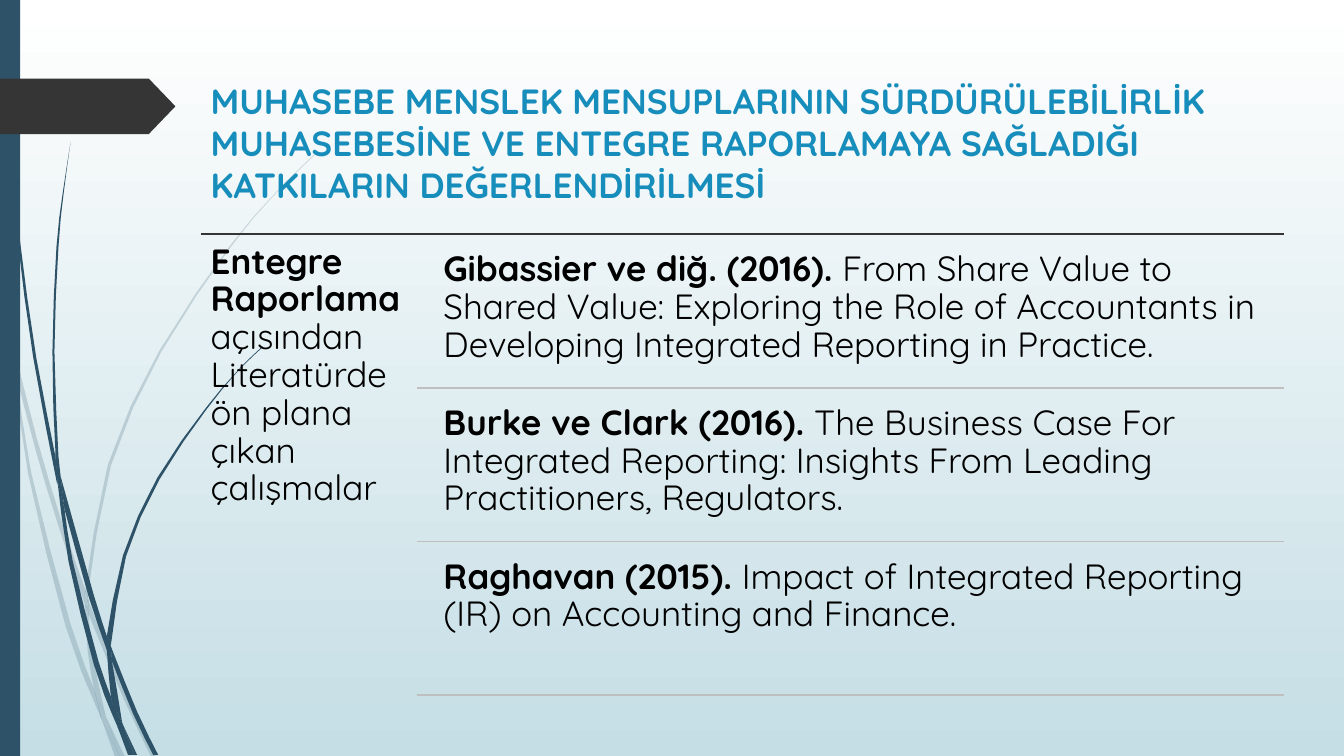
from dataclasses import dataclass

import pptx
import pptx.dml.color
import pptx.enum.shapes
import pptx.enum.text
import pptx.oxml.ns
import pptx.util

Inches = pptx.util.Inches
Pt = pptx.util.Pt
qn = pptx.oxml.ns.qn

WIDTH, HEIGHT = 13.33, 7.5
FONT, SIZE = "Quicksand", 25
COLORS = {
    "sky": "FFFFFF", "mist": "C5DEE5", "stem": "2E5369", "arrow": "353535",
    "title": "178DBB", "text": "000000", "rule": "BFBFBF",
}

# The study list spans five columns; each row is 20 units high with a unit of gap.
LIST_LEFT, LIST_TOP = 1.99, 2.32
COLUMN, COLUMNS = 2.15, 5
UNIT = 4.65 / 64
ROW, PITCH = 20 * UNIT, 21 * UNIT
STUDY_LEFT = LIST_LEFT + COLUMN
LIST_RIGHT = LIST_LEFT + COLUMNS * COLUMN
INDENT = 0.16


@dataclass
class Blade:
    """A piece of grass: knots along one edge, then back along the other, in inches."""
    out: list[tuple[float, float]]
    back: list[tuple[float, float]]


@dataclass
class Study:
    authors: str
    work: str


PALE_BLADES = [
    Blade([(0, 2.82), (0.09, 3.22), (0.11, 3.5)], [(0.1, 3.44), (0, 2.99)]),
    Blade([(0.14, 3.45), (0.36, 4.33), (0.62, 5.2), (0.85, 5.86)],
          [(0.84, 5.99), (0.58, 5.22), (0.36, 4.49), (0.17, 3.76)]),
    Blade([(0.88, 5.96), (0.92, 6.07), (1.27, 6.92), (1.55, 7.51)],
          [(1.5, 7.51), (1.23, 6.94), (0.88, 6.1)]),
    Blade([(1.05, 7.11), (1.24, 7.51)], [(1.19, 7.51), (1.05, 7.11)]),
    Blade([(0.11, 3.5), (0.17, 3.76), (0.31, 4.69), (0.7, 6.19), (0.93, 6.83), (1.01, 7.14)],
          [(0.92, 6.93), (0.65, 6.21), (0.28, 4.7), (0.11, 3.5)]),
    Blade([(0.84, 5.99), (0.88, 6.08), (0.91, 6.46), (1.05, 7.11)],
          [(0.96, 6.92), (0.93, 6.83), (0.87, 6.46), (0.84, 5.99)]),
    Blade([(3.12, 1.53), (2.89, 1.75), (2.68, 1.97), (2.28, 2.44), (1.58, 3.48),
           (1.07, 4.61), (0.85, 5.84), (0.85, 5.86)],
          [(0.88, 5.96), (0.88, 5.84), (1.1, 4.62), (1.6, 3.49), (2.29, 2.45),
           (2.68, 1.98), (2.9, 1.75), (3.12, 1.54)]),
    Blade([(1.01, 7.14), (1.19, 7.51)], [(1.14, 7.51), (1.01, 7.14)]),
    Blade([(0.85, 5.86), (0.88, 5.96), (0.88, 6.1)], [(0.88, 6.08), (0.84, 5.99)]),
    Blade([(0.93, 6.83), (0.96, 6.92), (1.05, 7.11), (1.19, 7.51)],
          [(1.19, 7.51), (1.01, 7.14), (0.99, 7.07), (0.93, 6.83)]),
]
DARK_BLADES = [
    Blade([(0.04, 0), (0.05, 0.48), (0.08, 1.09), (0.19, 2.32), (0.36, 3.55),
           (0.55, 4.53), (0.57, 4.81)],
          [(0.56, 4.77), (0.33, 3.55), (0.17, 2.33), (0.07, 1.1), (0.04, 0.48), (0.03, 0)]),
    Blade([(0.6, 4.72), (0.93, 5.9), (1.06, 6.31)],
          [(1.06, 6.45), (0.88, 5.92), (0.64, 5.05)]),
    Blade([(1.1, 6.41), (1.13, 6.49), (1.36, 7.06), (1.57, 7.49)],
          [(1.52, 7.49), (1.32, 7.08), (1.11, 6.56)]),
    Blade([(0.57, 4.77), (0.64, 5.05), (0.72, 5.56), (0.98, 6.57), (1.1, 6.91), (1.17, 7.22)],
          [(1.11, 7.08), (0.93, 6.59), (0.68, 5.57), (0.57, 4.77)]),
    Blade([(0.7, 1.41), (0.62, 1.93), (0.56, 2.45), (0.52, 3.49), (0.55, 4.49), (0.6, 4.72)],
          [(0.58, 4.53), (0.54, 3.49), (0.58, 2.45), (0.63, 1.93), (0.7, 1.41)]),
    Blade([(1.22, 7.19), (1.36, 7.49)], [(1.33, 7.49), (1.22, 7.19)]),
    Blade([(0.55, 4.49), (0.6, 4.72), (0.64, 5.05)], [(0.57, 4.77), (0.55, 4.53)]),
    Blade([(2.6, 3.44), (2.45, 3.58), (2.31, 3.73), (2.04, 4.05), (1.56, 4.74),
           (1.22, 5.51), (1.06, 6.31)],
          [(1.1, 6.41), (1.11, 6.33), (1.25, 5.52), (1.58, 4.76), (2.05, 4.06),
           (2.31, 3.74), (2.45, 3.59), (2.61, 3.44)]),
    Blade([(1.17, 7.22), (1.31, 7.49)], [(1.27, 7.49), (1.17, 7.22)]),
    Blade([(1.06, 6.45), (1.11, 6.56), (1.21, 7.16), (1.22, 7.19)],
          [(1.16, 7.06), (1.1, 6.91), (1.06, 6.45)]),
    Blade([(1.06, 6.31), (1.1, 6.41), (1.11, 6.56)], [(1.06, 6.45), (1.06, 6.31)]),
    Blade([(1.1, 6.91), (1.16, 7.06), (1.22, 7.19), (1.33, 7.49)],
          [(1.3, 7.49), (1.17, 7.22), (1.1, 6.91)]),
]
STUDIES = [
    Study("Gibassier ve diğ. (2016). ", "From Share Value to Shared Value: Exploring the "
          "Role of Accountants in Developing Integrated Reporting in Practice."),
    Study("Burke ve Clark (2016). ", "The Business Case For Integrated Reporting: "
          "Insights From Leading Practitioners, Regulators."),
    Study("Raghavan (2015). ", "Impact of Integrated Reporting (IR) on Accounting and Finance."),
]


def rgb(name: str) -> pptx.dml.color.RGBColor:
    return pptx.dml.color.RGBColor.from_string(COLORS[name])


def paint(shape, color: str, opacity: int = 100) -> None:
    shape.shadow.inherit = False
    shape.fill.solid()
    shape.fill.fore_color.rgb = rgb(color)
    shape.line.fill.background()
    if opacity < 100:
        tint = shape.element.spPr.find(".//" + qn("a:srgbClr"))
        tint.append(tint.makeelement(qn("a:alpha"), {"val": str(opacity * 1000)}))


def smooth(knots: list[tuple[float, float]]) -> list[tuple[float, float]]:
    """The knots with a Catmull-Rom point halfway between each two."""
    ends = [knots[0], *knots, knots[-1]]
    points = [knots[0]]
    for a, b, c, d in zip(ends, ends[1:], ends[2:], ends[3:]):
        points += [tuple((9 * (q + r) - p - s) / 16 for p, q, r, s in zip(a, b, c, d)), c]
    return points


def draw_blade(slide, blade: Blade, opacity: int) -> None:
    outline = [(x * 1000, y * 1000) for x, y in smooth(blade.out) + smooth(blade.back)]
    builder = slide.shapes.build_freeform(*outline[0], scale=Inches(1) / 1000)
    builder.add_line_segments(outline[1:], close=True)
    paint(builder.convert_to_shape(), "stem", opacity)


def draw_rule(slide, left: float, y: float, color: str) -> None:
    rule = slide.shapes.add_connector(
        pptx.enum.shapes.MSO_CONNECTOR.STRAIGHT,
        Inches(left), Inches(y), Inches(LIST_RIGHT), Inches(y))
    rule.line.color.rgb = rgb(color)
    rule.line.width = Pt(1.25)
    properties = rule.element.spPr
    properties.append(properties.makeelement(qn("a:effectLst"), {}))


def add_run(paragraph, text: str, color: str, bold: bool) -> None:
    run = paragraph.add_run()
    run.text = text
    run.font.name, run.font.size, run.font.bold = FONT, Pt(SIZE), bold
    run.font.color.rgb = rgb(color)


def add_entry(slide, left: float, top: float, width: float, height: float,
              lead: str, rest: str) -> None:
    """Text with a bold lead and a regular rest."""
    frame = slide.shapes.add_textbox(
        Inches(left), Inches(top), Inches(width), Inches(height)).text_frame
    frame.word_wrap = True
    frame.margin_left = frame.margin_right = Inches(0.1)
    frame.margin_top = frame.margin_bottom = Inches(0.1)
    paragraph = frame.paragraphs[0]
    paragraph.line_spacing, paragraph.space_after = 0.9, Pt(9)
    add_run(paragraph, lead, "text", True)
    add_run(paragraph, rest, "text", False)


def add_title(slide, text: str) -> None:
    title = slide.shapes.title
    title.left, title.top = Inches(LIST_LEFT), Inches(0.74)
    title.width, title.height = Inches(10.59), Inches(1.4)
    title.element.getparent().append(title.element)
    frame = title.text_frame
    frame.word_wrap = True
    frame.auto_size = pptx.enum.text.MSO_AUTO_SIZE.NONE
    frame.vertical_anchor = pptx.enum.text.MSO_ANCHOR.TOP
    frame.paragraphs[0].alignment = pptx.enum.text.PP_ALIGN.LEFT
    add_run(frame.paragraphs[0], text, "title", True)


def draw_backdrop(slide) -> None:
    fill = slide.background.fill
    fill.gradient()
    fill.gradient_angle = 270
    for stop, color in zip(fill.gradient_stops, ("sky", "mist")):
        stop.color.rgb = rgb(color)
    for blades, opacity in ((PALE_BLADES, 20), (DARK_BLADES, 100)):
        for blade in blades:
            draw_blade(slide, blade, opacity)
    presets = pptx.enum.shapes.MSO_SHAPE
    side_bar = slide.shapes.add_shape(presets.RECTANGLE, 0, 0, Inches(0.2), Inches(HEIGHT))
    paint(side_bar, "stem")
    arrow = slide.shapes.add_shape(presets.PENTAGON, 0, Inches(0.78), Inches(1.74), Inches(0.55))
    arrow.adjustments[0] = 0.48
    paint(arrow, "arrow")


def main() -> None:
    deck = pptx.Presentation()
    deck.slide_width, deck.slide_height = Inches(WIDTH), Inches(HEIGHT)
    slide = deck.slides.add_slide(deck.slide_layouts.get_by_name("Title Only"))
    draw_backdrop(slide)
    add_title(slide, "MUHASEBE MENSLEK MENSUPLARININ SÜRDÜRÜLEBİLİRLİK MUHASEBESİNE VE "
                     "ENTEGRE RAPORLAMAYA SAĞLADIĞI KATKILARIN DEĞERLENDİRİLMESİ")
    draw_rule(slide, LIST_LEFT, LIST_TOP, "arrow")
    add_entry(slide, LIST_LEFT, LIST_TOP, COLUMN, 64 * UNIT, "Entegre Raporlama ",
              "açısından Literatürde ön plana çıkan çalışmalar")
    for row, study in enumerate(STUDIES):
        top, left = LIST_TOP + UNIT + row * PITCH, STUDY_LEFT + INDENT
        add_entry(slide, left, top, LIST_RIGHT - left, ROW, study.authors, study.work)
        draw_rule(slide, STUDY_LEFT, top + ROW, "rule")
    deck.save("out.pptx")


if __name__ == "__main__":
    main()
